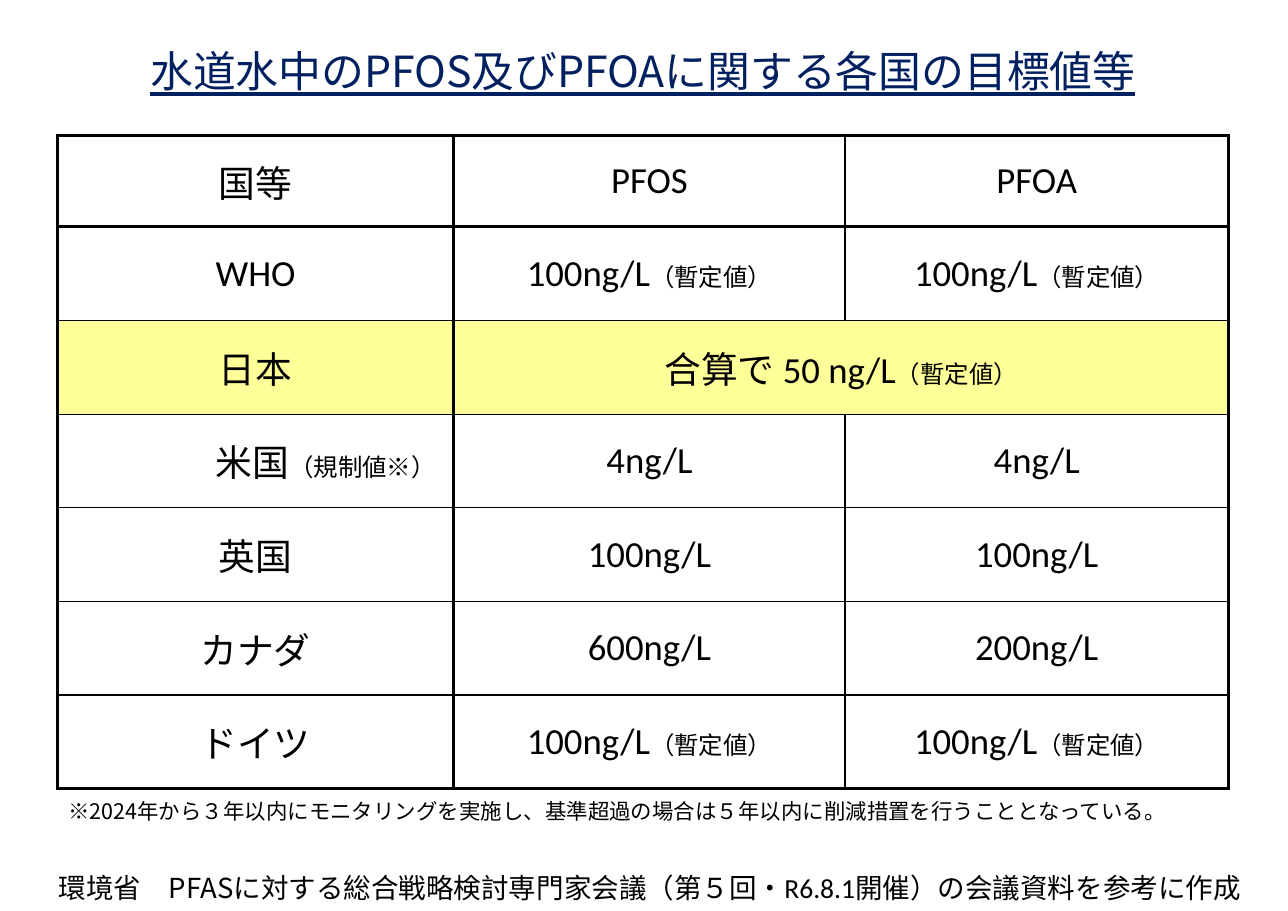
from lxml import etree
from pptx import Presentation
from pptx.dml.color import RGBColor
from pptx.enum.text import MSO_ANCHOR, MSO_AUTO_SIZE, MSO_UNDERLINE, PP_ALIGN
from pptx.oxml.ns import qn
from pptx.util import Emu, Pt

PX = 9144  # EMU per px, 100 px to the inch
BLACK = RGBColor(0x00, 0x00, 0x00)
NAVY = RGBColor(0x00, 0x20, 0x60)
YELLOW = RGBColor(0xFF, 0xFF, 0x99)
LATIN = "Calibri"
JAPANESE = "Noto Sans CJK JP"
THICK, THIN = 2.25, 1

PROVISIONAL = ("（暫定値）", 16)
LIMIT_100 = [("100ng/L", 24), PROVISIONAL]
COLUMN_WIDTHS = [360, 355, 348]
ROW_HEIGHTS = [83] + [85] * 6
JAPAN_ROW, USA_ROW = 2, 3
TARGETS = [
    [[("国等", 24)], [("PFOS", 24)], [("PFOA", 24)]],
    [[("WHO", 24)], LIMIT_100, LIMIT_100],
    [[("日本", 24)], [("合算で 50 ng/L", 24), PROVISIONAL], []],
    [[("米国", 24), ("（規制値※）", 16)], [("4ng/L", 24)], [("4ng/L", 24)]],
    [[("英国", 24)], [("100ng/L", 24)], [("100ng/L", 24)]],
    [[("カナダ", 24)], [("600ng/L", 24)], [("200ng/L", 24)]],
    [[("ドイツ", 24)], LIMIT_100, LIMIT_100],
]


def px(length):
    return Emu(length * PX)


def add_run(paragraph, text, size, color=BLACK, latin=LATIN,
            east_asian=JAPANESE, underline=None):
    run = paragraph.add_run()
    run.text = text
    font = run.font
    font.size = Pt(size)
    font.name = latin
    font.color.rgb = color
    font.underline = underline
    typeface = etree.Element(qn("a:ea"), typeface=east_asian)
    font._element.find(qn("a:latin")).addnext(typeface)


def add_label(slide, left, top, width, height, runs, size, align,
              color=BLACK, underline=None):
    """Add a one-paragraph text box; runs are (text, font) pairs."""
    frame = slide.shapes.add_textbox(px(left), px(top), px(width), px(height)).text_frame
    frame.word_wrap = True
    frame.auto_size = MSO_AUTO_SIZE.SHAPE_TO_FIT_TEXT
    paragraph = frame.paragraphs[0]
    paragraph.alignment = align
    for text, typeface in runs:
        add_run(paragraph, text, size, color, typeface, typeface, underline)


def set_borders(cell, **widths):
    """Draw black borders; widths are given in points for L, R, T and B."""
    properties = cell._tc.get_or_add_tcPr()
    for side in "LRTB":
        line = etree.SubElement(properties, qn(f"a:ln{side}"), w=str(Pt(widths[side])))
        fill = etree.SubElement(line, qn("a:solidFill"))
        etree.SubElement(fill, qn("a:srgbClr"), val=str(BLACK))


def fill_cell(cell, row, column, runs):
    cell.vertical_anchor = MSO_ANCHOR.MIDDLE
    cell.margin_left = cell.margin_right = px(11)
    cell.margin_top = cell.margin_bottom = px(6)
    last_row, last_column = len(ROW_HEIGHTS) - 1, len(COLUMN_WIDTHS) - 1
    reaches_right = column == last_column or cell.is_merge_origin
    set_borders(
        cell,
        L=THICK if column <= 1 else THIN,
        R=THICK if column == 0 or reaches_right else THIN,
        T=THICK if row <= 1 else THIN,
        B=THICK if row in (0, last_row) else THIN,
    )
    if row == JAPAN_ROW:
        cell.fill.solid()
        cell.fill.fore_color.rgb = YELLOW
    else:
        cell.fill.background()
    paragraph = cell.text_frame.paragraphs[0]
    paragraph.alignment = PP_ALIGN.CENTER
    if (row, column) == (USA_ROW, 0):
        paragraph.alignment = PP_ALIGN.LEFT
        cell.margin_left = px(144)
    for text, size in runs:
        add_run(paragraph, text, size)


def add_targets_table(slide, left, top):
    table = slide.shapes.add_table(
        len(ROW_HEIGHTS), len(COLUMN_WIDTHS), px(left), px(top),
        px(sum(COLUMN_WIDTHS)), px(sum(ROW_HEIGHTS))).table
    table.first_row = table.horz_banding = False
    for column, width in zip(table.columns, COLUMN_WIDTHS):
        column.width = px(width)
    for row, height in zip(table.rows, ROW_HEIGHTS):
        row.height = px(height)
    table.cell(JAPAN_ROW, 1).merge(table.cell(JAPAN_ROW, 2))
    for row, targets in enumerate(TARGETS):
        for column, runs in enumerate(targets):
            fill_cell(table.cell(row, column), row, column, runs)


def main():
    presentation = Presentation()
    presentation.slide_width, presentation.slide_height = px(1169), px(827)
    slide = presentation.slides.add_slide(presentation.slide_layouts[6])
    add_targets_table(slide, 52, 123)
    add_label(slide, 36, 36, 1095, 57,
              [("水道水中のPFOS及びPFOAに関する各国の目標値等", JAPANESE)],
              28, PP_ALIGN.CENTER, NAVY, MSO_UNDERLINE.HEAVY_LINE)
    add_label(slide, 6, 786, 1130, 40,
              [("環境省　PFASに対する総合戦略検討専門家会議", JAPANESE),
               ("（第５回・R6.8.1開催）の会議資料を参考に作成", LATIN)],
              18, PP_ALIGN.RIGHT)
    add_label(slide, 52, 720, 1048, 34,
              [("※2024年から３年以内にモニタリングを実施し、基準超過の場合は"
                "５年以内に削減措置を行うこととなっている。", JAPANESE)],
              14, PP_ALIGN.LEFT)
    presentation.save("out.pptx")


if __name__ == "__main__":
    main()
